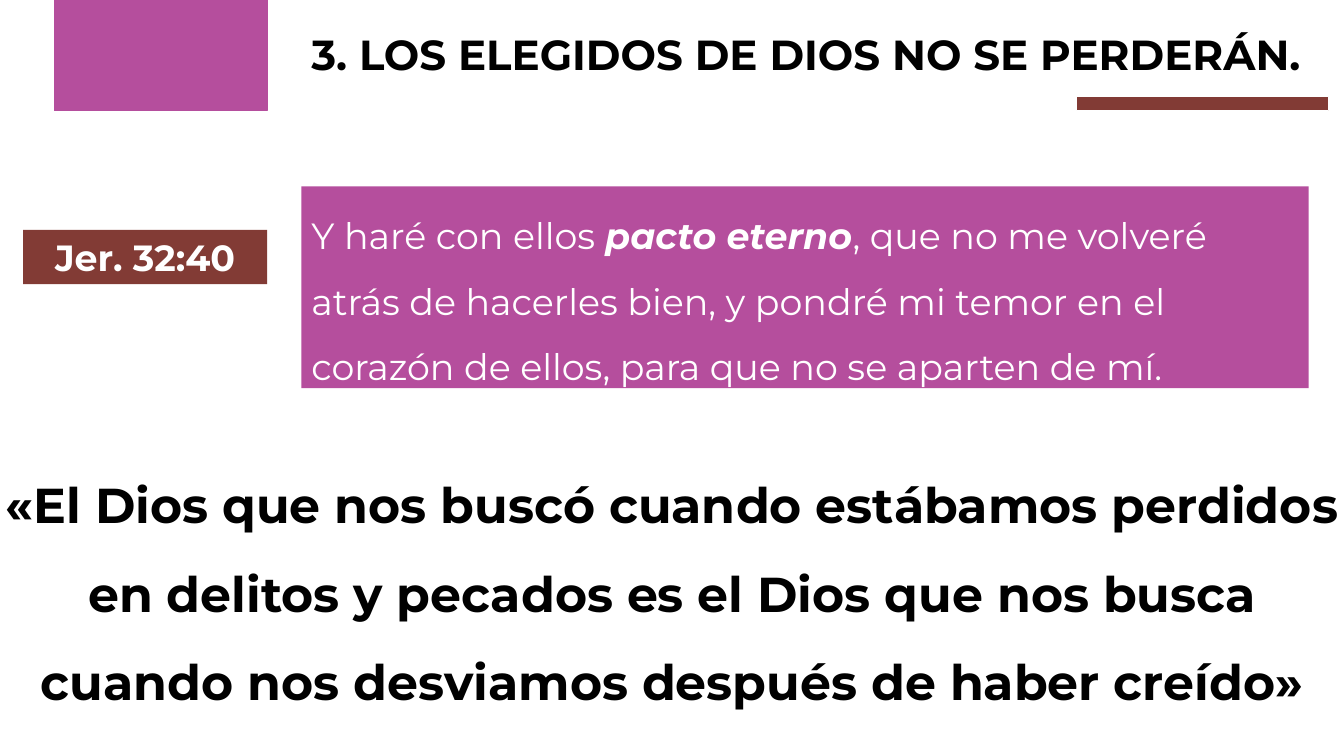
from pptx import Presentation
from pptx.dml.color import RGBColor
from pptx.enum.shapes import MSO_SHAPE
from pptx.enum.text import MSO_ANCHOR, MSO_AUTO_SIZE, PP_ALIGN
from pptx.util import Inches, Pt

COLORS = {"brown": "823B35", "purple": "B54E9D", "white": "FFFFFF", "black": "000000"}
FONT = "Montserrat"


def color(name):
    return RGBColor.from_string(COLORS[name])


def add_block(slide, box, fill, outline=None):
    block = slide.shapes.add_shape(MSO_SHAPE.RECTANGLE, *map(Inches, box))
    block.shadow.inherit = False
    block.fill.solid()
    block.fill.fore_color.rgb = color(fill)
    if outline:
        block.line.color.rgb = color(outline)
        block.line.width = Pt(1)
    else:
        block.line.fill.background()
    return block


def add_label(slide, box):
    return slide.shapes.add_textbox(*map(Inches, box))


def write(holder, paragraphs, size, ink, align=PP_ALIGN.LEFT, spacing=None):
    frame = holder.text_frame
    frame.word_wrap = True
    frame.auto_size = MSO_AUTO_SIZE.SHAPE_TO_FIT_TEXT
    frame.vertical_anchor = MSO_ANCHOR.TOP
    for index, runs in enumerate(paragraphs):
        paragraph = frame.add_paragraph() if index else frame.paragraphs[0]
        paragraph.alignment = align
        if spacing:
            paragraph.line_spacing = spacing
        for words, bold, italic in runs:
            run = paragraph.add_run()
            run.text = words
            run.font.name = FONT
            run.font.size = Pt(size)
            run.font.bold = bold
            run.font.italic = italic
            run.font.color.rgb = color(ink)


def main():
    deck = Presentation()
    deck.slide_width = Inches(13.33)
    deck.slide_height = Inches(7.5)
    slide = deck.slides.add_slide(deck.slide_layouts[6])

    add_block(slide, (10.68, 0.96, 2.5, 0.14), "brown", "white")
    add_block(slide, (0.54, 0, 2.11, 1.1), "purple", "purple")

    reference = add_block(slide, (0.23, 2.28, 2.42, 0.54), "brown")
    write(reference, [[("Jer. 32:40", True, False)]], 26, "white", PP_ALIGN.CENTER)

    verse = add_block(slide, (2.99, 1.85, 9.99, 2), "purple")
    verse_runs = [
        ("Y haré con ellos ", False, False),
        ("pacto eterno", True, True),
        (", que no me volveré atrás de hacerles bien, y pondré mi temor en el "
         "corazón de ellos, para que no se aparten de mí.", False, False),
    ]
    write(verse, [verse_runs], 26, "white", spacing=1.5)

    heading = add_label(slide, (2.99, 0.23, 10.35, 0.61))
    write(heading, [[("3. LOS ELEGIDOS DE DIOS NO SE PERDERÁN.", True, False)]], 30, "black")

    quote = add_label(slide, (-0.33, 4.37, 14, 2.65))
    quote_lines = [
        "«El Dios que nos buscó cuando estábamos perdidos",
        "en delitos y pecados es el Dios que nos busca",
        "cuando nos desviamos después de haber creído»",
    ]
    write(quote, [[(line, True, False)] for line in quote_lines], 35, "black",
          PP_ALIGN.CENTER, 1.5)

    deck.save("out.pptx")


if __name__ == "__main__":
    main()
